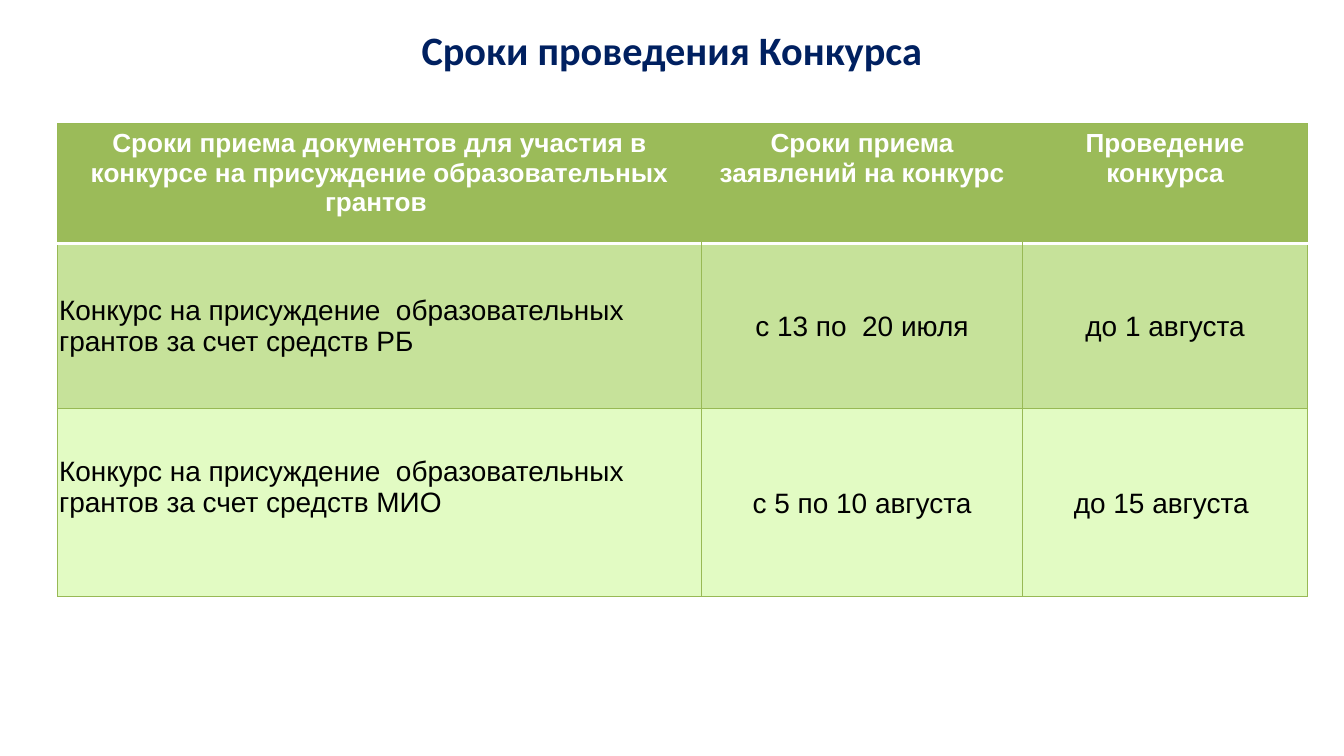
from lxml import etree
from pptx import Presentation, util as u
from pptx.dml.color import RGBColor
from pptx.enum.text import MSO_ANCHOR, PP_ALIGN
from pptx.oxml.ns import qn

TITLE = "Сроки проведения Конкурса"
HEADER = (
    "Сроки приема документов для участия в конкурсе на присуждение образовательных грантов ",
    "Сроки приема заявлений на конкурс",
    "Проведение конкурса",
)
CONTESTS = (
    ("Конкурс на присуждение  образовательных грантов за счет средств РБ",
     "с 13 по  20 июля", "до 1 августа"),
    ("Конкурс на присуждение  образовательных грантов за счет средств МИО",
     "с 5 по 10 августа", "до 15 августа "),
)

NAVY = RGBColor(0x00, 0x20, 0x60)
WHITE = RGBColor(0xFF, 0xFF, 0xFF)
BLACK = RGBColor(0x00, 0x00, 0x00)
GREEN = RGBColor(0x9B, 0xBB, 0x59)
BORDER = RGBColor(0x98, 0xB9, 0x55)
ROW_FILLS = (GREEN, RGBColor(0xC6, 0xE2, 0x9A), RGBColor(0xE2, 0xFB, 0xC3))

SLIDE_WIDTH = u.Inches(10)
SLIDE_HEIGHT = SLIDE_WIDTH * 9 // 16
COLUMNS = (4.79, 2.39, 2.12)
ROWS = (0.89, 1.23, 1.4)
LEFT, TOP = 0.43, 0.92
HEADER_MARGINS = (0.1, 0.04, 0.1, 0.04)
BODY_MARGINS = (0.01, 0.01, 0.01, 0)
RAISED_MARGINS = (0.01, 0.01, 0.01, 0.24)


def write(frame, words, font, size, color, bold, align=PP_ALIGN.CENTER):
    paragraph = frame.paragraphs[0]
    paragraph.alignment = align
    run = paragraph.add_run()
    run.text = words
    run.font.name, run.font.size, run.font.bold = font, u.Pt(size), bold
    run.font.color.rgb = color


def add_borders(cell, edges):
    """Draw edges given as {side: (colour, points)}, or None for no line."""
    properties = cell._tc.get_or_add_tcPr()
    for side in "LRTB":
        color, points = edges[side] or (None, 0)
        line = etree.SubElement(properties, qn(f"a:ln{side}"), w=str(u.Pt(points)))
        if color is None:
            etree.SubElement(line, qn("a:noFill"))
        else:
            fill = etree.SubElement(line, qn("a:solidFill"))
            etree.SubElement(fill, qn("a:srgbClr"), val=str(color))


def format_cell(cell, words, row, column):
    is_header = row == 0
    thin, rule = (BORDER, 0.75), (WHITE, 2)
    inner = None if is_header else thin
    add_borders(cell, {
        "L": thin if column == 0 else inner,
        "R": thin if column == len(COLUMNS) - 1 else inner,
        "T": rule if row == 1 else thin,
        "B": rule if is_header else thin,
    })
    cell.fill.solid()
    cell.fill.fore_color.rgb = ROW_FILLS[row]

    raised = row == len(ROWS) - 1 and column == 0
    margins = HEADER_MARGINS if is_header else RAISED_MARGINS if raised else BODY_MARGINS
    (cell.margin_left, cell.margin_top,
     cell.margin_right, cell.margin_bottom) = map(u.Inches, margins)
    cell.vertical_anchor = MSO_ANCHOR.TOP if is_header else MSO_ANCHOR.MIDDLE
    align = PP_ALIGN.CENTER if is_header or column else PP_ALIGN.LEFT
    write(cell.text_frame, words, "Arial", 14 if is_header else 15,
          WHITE if is_header else BLACK, is_header, align)


def main():
    deck = Presentation()
    deck.slide_width, deck.slide_height = SLIDE_WIDTH, SLIDE_HEIGHT
    slide = deck.slides.add_slide(deck.slide_layouts[5])

    title = slide.shapes.title
    title.left, title.top, title.width, title.height = map(u.Inches, (0.5, 0.23, 9, 0.28))
    title.text_frame.vertical_anchor = MSO_ANCHOR.MIDDLE
    write(title.text_frame, TITLE, "Calibri", 21.6, NAVY, True)

    box = map(u.Inches, (LEFT, TOP, sum(COLUMNS), sum(ROWS)))
    schedule = slide.shapes.add_table(len(ROWS), len(COLUMNS), *box).table
    for column, width in zip(schedule.columns, COLUMNS):
        column.width = u.Inches(width)
    for row, height in zip(schedule.rows, ROWS):
        row.height = u.Inches(height)
    for r, entries in enumerate((HEADER, *CONTESTS)):
        for c, words in enumerate(entries):
            format_cell(schedule.cell(r, c), words, r, c)

    deck.save("out.pptx")


if __name__ == "__main__":
    main()
